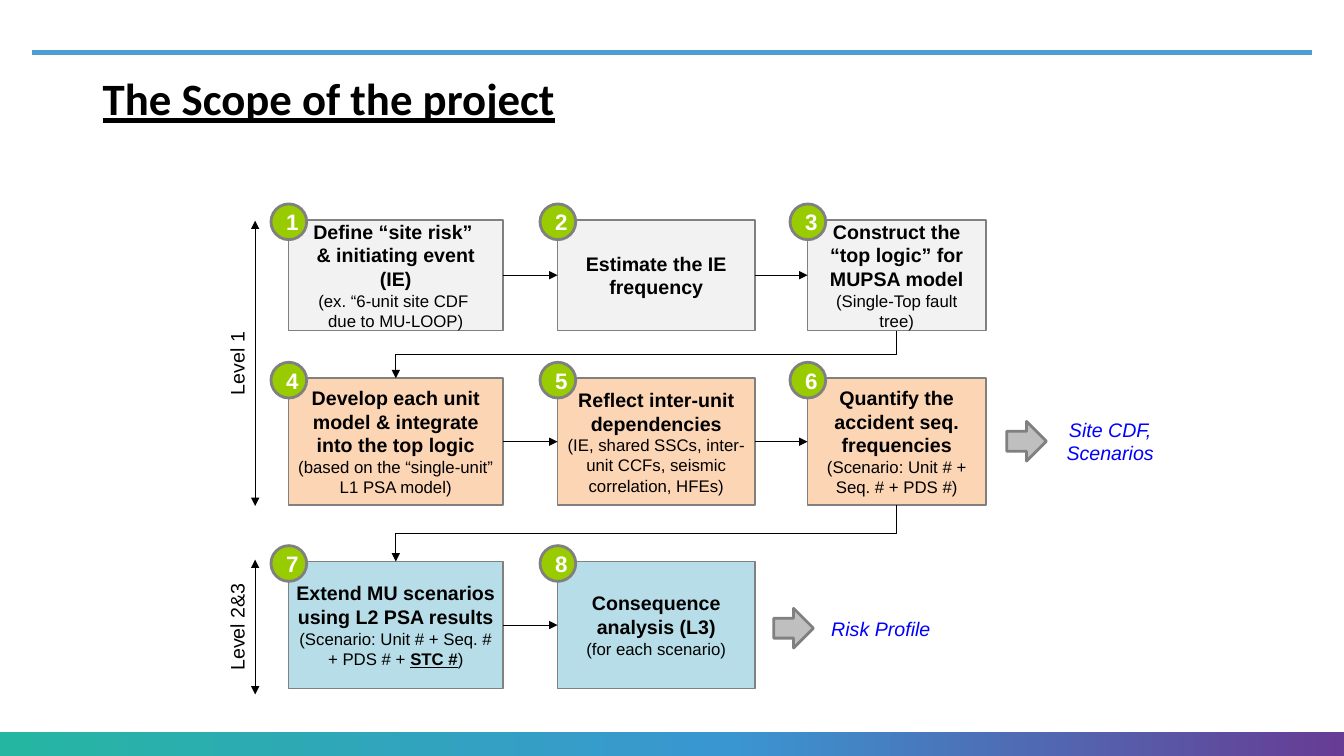
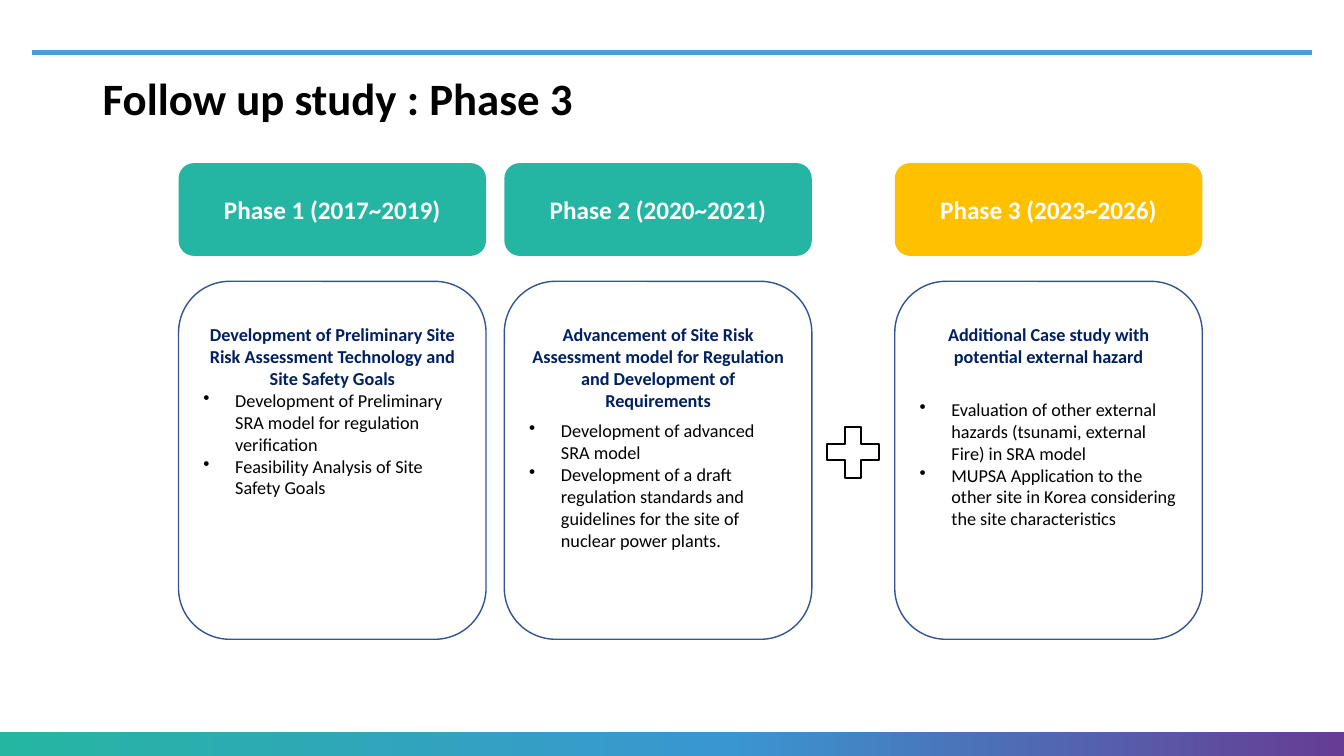
from copy import deepcopy
from dataclasses import dataclass

from pptx import Presentation
from pptx.dml.color import RGBColor
from pptx.enum.shapes import MSO_CONNECTOR, MSO_SHAPE
from pptx.enum.text import MSO_ANCHOR, PP_ALIGN
from pptx.oxml.ns import qn
from pptx.oxml.xmlchemy import OxmlElement
from pptx.util import Cm, Pt


@dataclass(frozen=True)
class Theme:
    title_font: str = "Calibri"
    flow_font: str = "Arial"
    black: str = "000000"
    white: str = "FFFFFF"
    rule: str = "4B9DD4"
    band: tuple = ((0, "25B6A2"), (0.54, "3A96D1"), (1, "663C94"))
    grey: str = "808080"
    arrow: str = "BFBFBF"
    badge: str = "99CC00"
    result: str = "0000FF"
    level_fills: tuple = ("F2F2F2", "FCD5B5", "B7DEE8")
    teal: str = "25B6A3"
    amber: str = "FFC000"
    card_line: str = "325491"
    navy: str = "002060"
    title_size: int = 32
    phase_size: int = 18
    badge_size: int = 16
    step_size: int = 14
    card_size: int = 13
    detail_size: int = 12


T = Theme()
WIDTH, HEIGHT = 33.87, 19.05

COLUMNS = [(7.27, 5.41), (14.05, 4.98), (20.35, 4.5)]
ROWS = [(5.54, 2.79), (9.53, 3.2), (14.15, 3.2)]
STEPS = [
    ("Define “site risk” \v& initiating event (IE)", "(ex. “6-unit site CDF \vdue to MU-LOOP)", 0.25),
    ("Estimate the IE frequency", "", 0.25),
    ("Construct the “top logic” for MUPSA model", "(Single-Top fault tree)", 0.25),
    ("Develop each unit model & integrate into the top logic",
     "(based on the “single-unit” L1 PSA model)", 0.1),
    ("Reflect inter-unit dependencies",
     "(IE, shared SSCs, inter-unit CCFs, seismic correlation, HFEs)", 0.2),
    ("Quantify the accident seq. frequencies", "(Scenario: Unit # + Seq. # + PDS #)", 0.25),
    ("Extend MU scenarios using L2 PSA results",
     "(Scenario: Unit # + Seq. # + PDS # + |STC #|)", 0.2),
    ("Consequence analysis (L3)", "(for each scenario)", 0.2),
]
LEVELS = [("Level 1", 5.56, 12.75), ("Level 2&3", 14.1, 17.5)]
RESULTS = [("Site CDF,\nScenarios", 25.37, 11.12, 3.02), ("Risk Profile", 19.5, 15.83, 3.2)]

PHASES = [
    ("Phase 1 (2017~2019)", 4.5, T.teal, 0,
     "Development of Preliminary Site Risk Assessment Technology and Site Safety Goals",
     ["Development of Preliminary SRA model for regulation verification",
      "Feasibility Analysis of Site Safety Goals"]),
    ("Phase 2 (2020~2021)", 12.71, T.teal, 6,
     "Advancement of Site Risk Assessment model for Regulation and Development of Requirements",
     ["Development of advanced SRA model",
      "Development of a draft regulation standards and guidelines for the site of nuclear power plants."]),
    ("Phase 3 (2023~2026)", 22.55, T.amber, 22,
     "Additional Case study with potential external hazard",
     ["Evaluation of other external hazards (tsunami, external Fire) in SRA model",
      "MUPSA Application to the other site in Korea considering the site characteristics"]),
]
PHASE_WIDTH = 7.75


def rgb(color):
    return RGBColor.from_string(color)


def format_runs(p, font, size, color, bold=False, italic=False, align=PP_ALIGN.CENTER):
    p.alignment = align
    for r in p.runs:
        r.font.name, r.font.size = font, Pt(size)
        r.font.bold, r.font.italic = bold, italic
        r.font.color.rgb = rgb(color)


def add_shape(s, kind, x, y, w, h, fill=None, line=None, weight=1):
    sp = s.shapes.add_shape(kind, Cm(x), Cm(y), Cm(w), Cm(h))
    sp.shadow.inherit = False
    if fill:
        sp.fill.solid()
        sp.fill.fore_color.rgb = rgb(fill)
    else:
        sp.fill.background()
    if line:
        sp.line.color.rgb = rgb(line)
        sp.line.width = Pt(weight)
    else:
        sp.line.fill.background()
    sp.text_frame.word_wrap = True
    sp.text_frame.vertical_anchor = MSO_ANCHOR.MIDDLE
    return sp


def add_text(s, text, x, y, w, h, font, size, color, **style):
    sp = s.shapes.add_textbox(Cm(x), Cm(y), Cm(w), Cm(h))
    tf = sp.text_frame
    tf.word_wrap = True
    tf.vertical_anchor = MSO_ANCHOR.MIDDLE
    tf.text = text
    for p in tf.paragraphs:
        format_runs(p, font, size, color, **style)
    return sp


def add_line(s, x1=0, y1=0, x2=0, y2=0, color=T.black, weight=0.75, ends=(), kind=MSO_CONNECTOR.STRAIGHT):
    c = s.shapes.add_connector(kind, Cm(x1), Cm(y1), Cm(x2), Cm(y2))
    c.line.color.rgb = rgb(color)
    c.line.width = Pt(weight)
    ln = c.element.spPr.find(qn("a:ln"))
    for end in ends:
        ln.append(OxmlElement(f"a:{end}"))
        ln[-1].set("type", "triangle")
    c.element.spPr.append(OxmlElement("a:effectLst"))
    return c


def join_steps(s, start, end):
    c = add_line(s, ends=["tailEnd"])
    c.begin_connect(start, 3)
    c.end_connect(end, 1)


def join_rows(s, start, end):
    c = add_line(s, ends=["tailEnd"], kind=MSO_CONNECTOR.ELBOW)
    c.begin_connect(start, 2)
    c.end_connect(end, 0)
    across, down = c.width, c.height
    mid_x, mid_y = c.left + across // 2, c.top + down // 2
    c.left, c.top = mid_x - down // 2, mid_y - across // 2
    c.width, c.height = down, across
    xfrm = c.element.spPr.find(qn("a:xfrm"))
    xfrm.flipH = xfrm.flipV = False
    xfrm.rot = 90


def add_base(prs, title, underline=False):
    s = prs.slides.add_slide(prs.slide_layouts[6])
    add_line(s, 0.81, 1.32, 33.07, 1.32, T.rule, 3.25)
    band = add_shape(s, MSO_SHAPE.RECTANGLE, 0, 18.44, WIDTH, HEIGHT - 18.44)
    band.fill.gradient()
    band.fill.gradient_angle = 0
    stops = band.element.spPr.find(qn("a:gradFill")).find(qn("a:gsLst"))
    stops.append(deepcopy(stops[-1]))
    for stop, (position, color) in zip(band.fill.gradient_stops, T.band):
        stop.position = position
        stop.color.rgb = rgb(color)
    sp = add_text(s, title, 2.34, 1.68, 30.35, 1.75, T.title_font, T.title_size, T.black,
                  bold=True, align=PP_ALIGN.LEFT)
    p = sp.text_frame.paragraphs[0]
    p.line_spacing = 0.9
    p.runs[0].font.underline = underline
    return s


def add_step(s, index, heading, detail, inset):
    row, col = divmod(index, len(COLUMNS))
    (x, w), (y, h) = COLUMNS[col], ROWS[row]
    sp = add_shape(s, MSO_SHAPE.RECTANGLE, x, y, w, h, T.level_fills[row], T.grey)
    tf = sp.text_frame
    tf.margin_left = tf.margin_right = Cm(inset)
    p = tf.paragraphs[0]
    p.text = heading
    format_runs(p, T.flow_font, T.step_size, T.black, bold=True)
    if detail:
        p = tf.add_paragraph()
        plain, *marked = detail.split("|")
        p.text = plain
        for part in marked:
            p.add_run().text = part
        format_runs(p, T.flow_font, T.detail_size, T.black)
        for r in p.runs[1::2] if marked else []:
            r.font.bold = r.font.underline = True
    return sp


def add_badge(s, index):
    row, col = divmod(index, len(COLUMNS))
    sp = add_shape(s, MSO_SHAPE.FLOWCHART_CONNECTOR, COLUMNS[col][0] - 0.44, ROWS[row][0] - 0.4,
                   0.9, 0.9, T.badge, T.grey, 2)
    sp.text_frame.text = str(index + 1)
    format_runs(sp.text_frame.paragraphs[0], T.flow_font, T.badge_size, T.white, bold=True)


def build_scope(prs):
    s = add_base(prs, "The Scope of the project", underline=True)
    boxes = [add_step(s, i, *step) for i, step in enumerate(STEPS)]
    for i, (start, end) in enumerate(zip(boxes, boxes[1:]), 1):
        join = join_steps if i % len(COLUMNS) else join_rows
        join(s, start, end)
    for i in range(len(STEPS)):
        add_badge(s, i)
    for name, top, bottom in LEVELS:
        add_line(s, 6.43, top, 6.43, bottom, ends=["headEnd", "tailEnd"])
        sp = add_text(s, name, 4.37, (top + bottom) / 2 - 0.4, 3.2, 0.8,
                      T.flow_font, T.step_size, T.black)
        sp.rotation = 270
    for text, x, mid, w in RESULTS:
        add_shape(s, MSO_SHAPE.RIGHT_ARROW, x, mid - 0.5, 1, 1, T.arrow, T.grey, 2)
        add_text(s, text, x + 1.1, mid - 1, w, 2, T.flow_font, T.step_size, T.result, italic=True)


def add_bullet(tf, text, gap):
    p = tf.add_paragraph()
    p.text = text
    pPr = p._p.get_or_add_pPr()
    pPr.set("marL", str(Cm(0.8)))
    pPr.set("indent", str(-Cm(0.8)))
    bullet = OxmlElement("a:buChar")
    bullet.set("char", "•")
    pPr.append(bullet)
    p.space_before = Pt(gap)
    format_runs(p, T.title_font, T.card_size, T.black, align=PP_ALIGN.LEFT)


def build_phases(prs):
    s = add_base(prs, "Follow up study : Phase 3")
    for name, x, fill, gap, goal, tasks in PHASES:
        head = add_shape(s, MSO_SHAPE.ROUNDED_RECTANGLE, x, 4.11, PHASE_WIDTH, 2.34, fill)
        head.text_frame.text = name
        format_runs(head.text_frame.paragraphs[0], T.title_font, T.phase_size, T.white, bold=True)
        card = add_shape(s, MSO_SHAPE.ROUNDED_RECTANGLE, x, 7.09, PHASE_WIDTH, 9.02, T.white, T.card_line)
        tf = card.text_frame
        tf.vertical_anchor = MSO_ANCHOR.TOP
        tf.margin_top = Cm(0.69)
        tf.text = goal
        format_runs(tf.paragraphs[0], T.title_font, T.card_size, T.navy, bold=True)
        for i, task in enumerate(tasks):
            add_bullet(tf, task, 0 if i else gap)
    add_shape(s, MSO_SHAPE.MATH_PLUS, 20.6, 10.52, 1.8, 1.75, line=T.black, weight=1.5)


def main():
    prs = Presentation()
    prs.slide_width, prs.slide_height = Cm(WIDTH), Cm(HEIGHT)
    build_scope(prs)
    build_phases(prs)
    prs.save("out.pptx")


if __name__ == "__main__":
    main()
